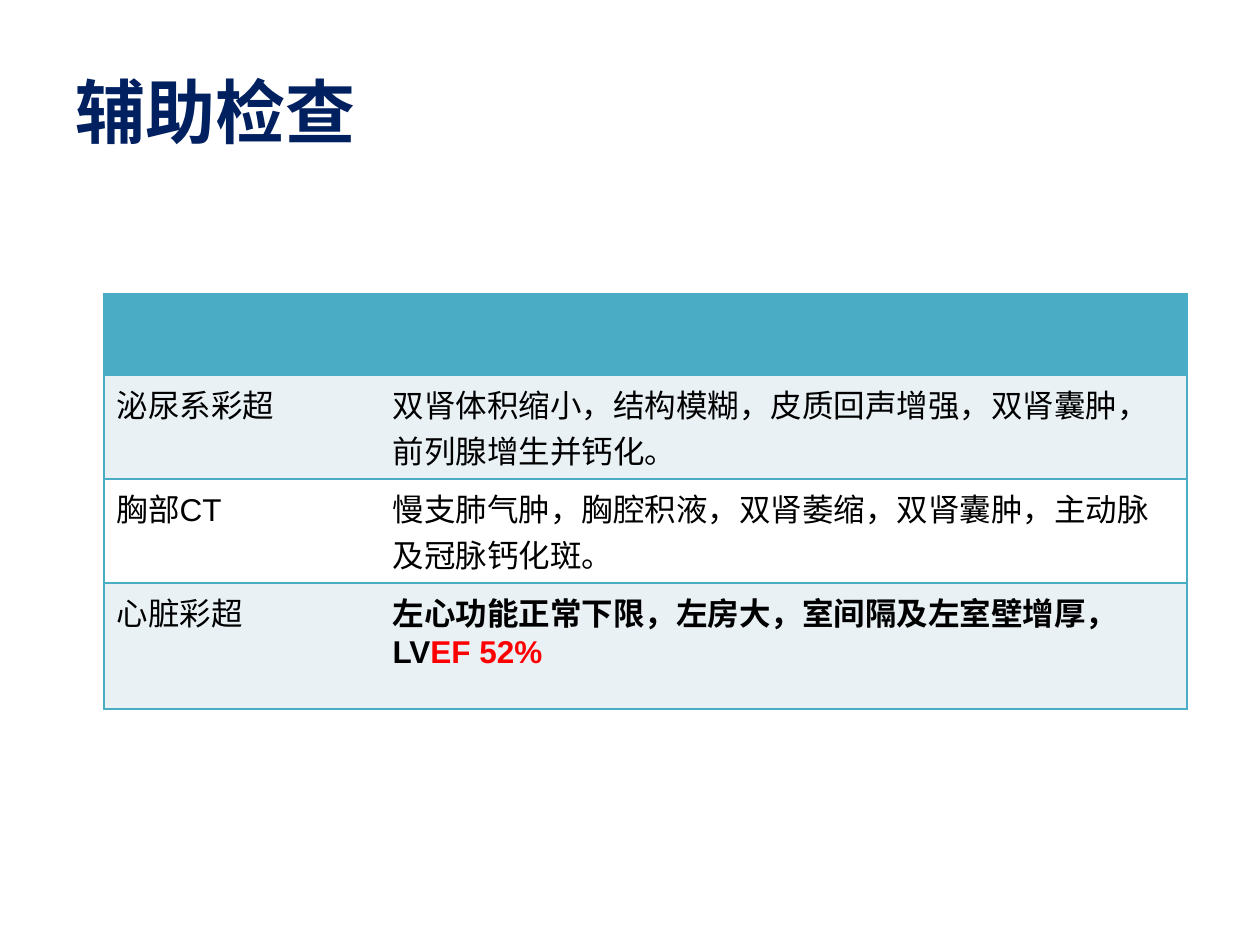
from dataclasses import dataclass

from lxml import etree
from pptx import Presentation
from pptx import util as u
from pptx.dml.color import RGBColor
from pptx.enum import lang, text
from pptx.oxml.ns import qn

SCALE = 914400 / 126


@dataclass(frozen=True)
class Theme:
    """Colours, font and type sizes of the slide."""
    font: str = "Arial"
    title_size: int = 40
    body_size: int = 18
    navy: str = "002060"
    teal: str = "4BACC6"
    band: str = "E9F1F5"
    white: str = "FFFFFF"
    black: str = "000000"
    red: str = "FF0000"


THEME = Theme()

FINDINGS = [
    ("泌尿系彩超", [("双肾体积缩小，结构模糊，皮质回声增强，双肾囊肿，前列腺增生并钙化。", THEME.black, False)]),
    ("胸部CT", [("慢支肺气肿，胸腔积液，双肾萎缩，双肾囊肿，主动脉及冠脉钙化斑。", THEME.black, False)]),
    ("心脏彩超", [
        ("左心功能正常下限，左房大，室间隔及左室壁增厚，LV", THEME.black, True),
        ("EF 52%", THEME.red, True),
    ]),
]


def px(length):
    """Turn px into EMU."""
    return u.Emu(round(length * SCALE))


def set_attributes(target, values):
    """Set each named attribute of the target."""
    for name, value in values.items():
        setattr(target, name, value)


def add_run(paragraph, wording, size, color, bold):
    """Append one formatted run to the paragraph."""
    run = paragraph.add_run()
    run.text = wording
    set_attributes(run.font, {
        "name": THEME.font,
        "size": u.Pt(size),
        "bold": bold,
        "language_id": lang.MSO_LANGUAGE_ID.SIMPLIFIED_CHINESE,
    })
    run.font.color.rgb = RGBColor.from_string(color)


def add_border(cell, side, color):
    """Draw a one-point line on one side of the cell, or none without a colour."""
    line = etree.SubElement(cell._tc.get_or_add_tcPr(), qn(f"a:ln{side}"), w=str(u.Pt(1)))
    if color is None:
        etree.SubElement(line, qn("a:noFill"))
        return
    fill = etree.SubElement(line, qn("a:solidFill"))
    etree.SubElement(fill, qn("a:srgbClr"), val=color)


def style_cell(cell, fill, is_first, is_last):
    """Give the cell its outer borders, row lines and fill."""
    borders = {
        "L": THEME.teal if is_first else None,
        "R": THEME.teal if is_last else None,
        "T": THEME.teal,
        "B": THEME.teal,
    }
    for side, color in borders.items():
        add_border(cell, side, color)
    cell.fill.solid()
    cell.fill.fore_color.rgb = RGBColor.from_string(fill)


def add_title(slide, left, top, width, height):
    """Place the slide title, centred vertically in its box."""
    frame = slide.shapes.add_textbox(px(left), px(top), px(width), px(height)).text_frame
    set_attributes(frame, {"word_wrap": True, "vertical_anchor": text.MSO_ANCHOR.MIDDLE})
    add_run(frame.paragraphs[0], "辅助检查", THEME.title_size, THEME.navy, True)


def add_findings_table(slide, left, top, column_widths, row_heights):
    """Place the examination table with an empty header and banded rows."""
    table = slide.shapes.add_table(
        len(row_heights), len(column_widths), px(left), px(top),
        px(sum(column_widths)), px(sum(row_heights))).table
    for column, width in zip(table.columns, column_widths):
        column.width = px(width)
    for row, height in zip(table.rows, row_heights):
        row.height = px(height)

    last = len(column_widths) - 1
    fills = [THEME.teal, THEME.band, THEME.white, THEME.band]
    for row, fill in zip(table.rows, fills):
        for index, cell in enumerate(row.cells):
            style_cell(cell, fill, index == 0, index == last)

    for index, (examination, result) in enumerate(FINDINGS, start=1):
        contents = [[(examination, THEME.black, False)], result]
        for cell, runs in zip(table.rows[index].cells, contents):
            for wording, color, bold in runs:
                add_run(cell.text_frame.paragraphs[0], wording, THEME.body_size, color, bold)


def main():
    """Build and save the slide."""
    presentation = Presentation()
    set_attributes(presentation, {"slide_width": px(1260), "slide_height": px(945)})
    slide = presentation.slides.add_slide(presentation.slide_layouts[6])
    add_title(slide, 63, 26, 1134, 169)
    add_findings_table(slide, 104, 294, [276, 807], [81, 104, 104, 126])
    presentation.save("out.pptx")


if __name__ == "__main__":
    main()
